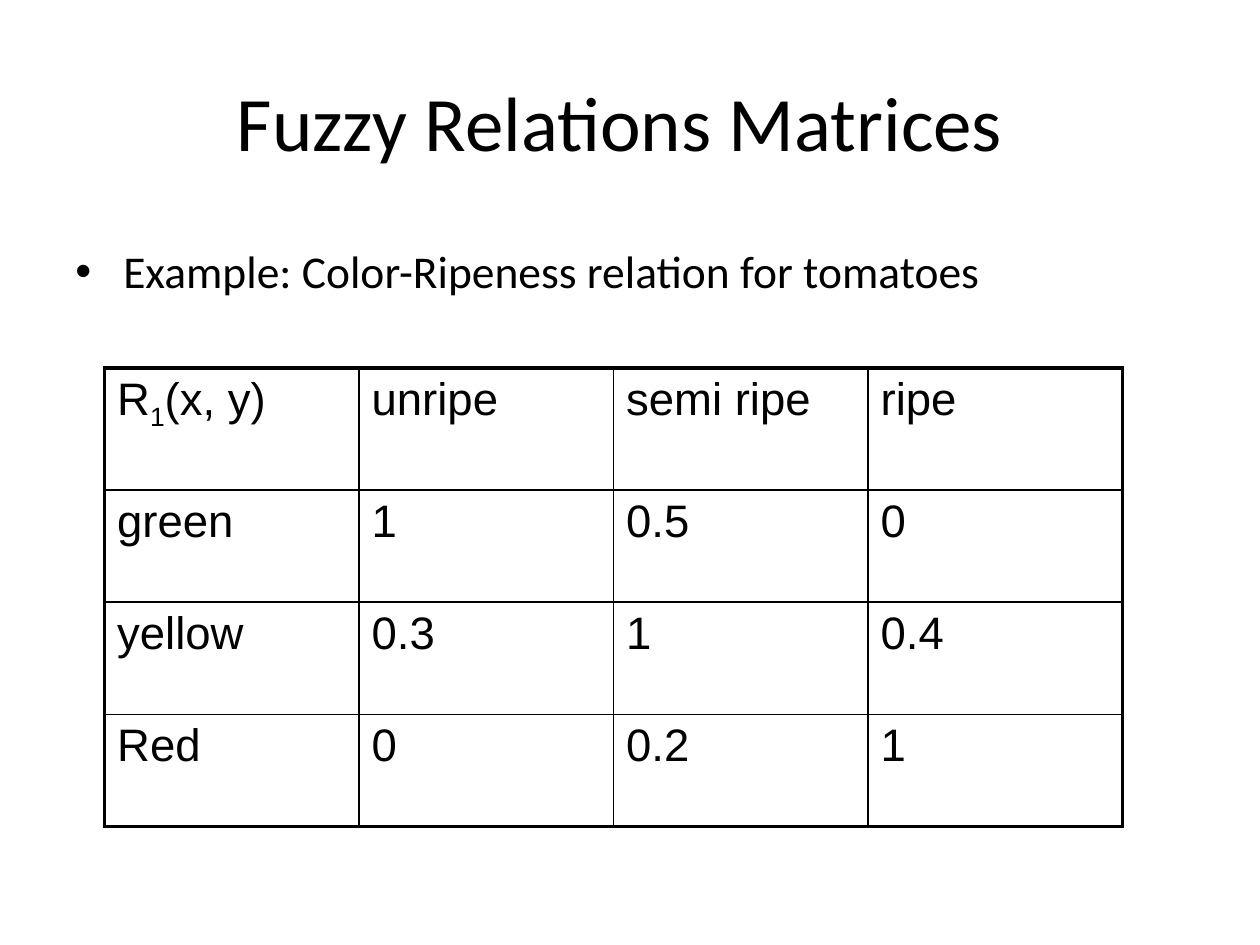
"""Build a slide with a fuzzy relation matrix for tomato color and ripeness."""
from lxml.etree import SubElement
from pptx import Presentation
from pptx.dml.color import RGBColor
from pptx.enum.text import MSO_ANCHOR, PP_ALIGN
from pptx.oxml.ns import qn
from pptx.util import Inches, Pt

TITLE = "Fuzzy Relations Matrices"
EXAMPLE = "Example: Color-Ripeness relation for tomatoes"
RELATION = [("R", 0), ("1", -25000), ("(x, y)", 0)]
RIPENESS = ["unripe", "semi ripe", "ripe"]
GRADES = {
    "green": ["1", "0.5", "0"],
    "yellow": ["0.3", "1", "0.4"],
    "Red": ["0", "0.2", "1"],
}
COLORS = {"ink": "000000"}
WIDTH, HEIGHT = 10, 7.5
TITLE_AREA = (0.67, 0.33, 8.5, 1.25)
EXAMPLE_AREA = (0.5, 1.88, 8.75, 0.95)
TABLE_LEFT, TABLE_TOP, COLUMN_WIDTH = 0.83, 2.92, 2.02
ROW_HEIGHTS = [0.97] + [0.89] * len(GRADES)
OUTER_LINE, INNER_LINE = 2.25, 1
INDENT = Inches(0.38)


def set_font(para, name, size):
    para.font.name = name
    para.font.size = Pt(size)
    para.font.color.rgb = RGBColor.from_string(COLORS["ink"])


def space_before(para):
    spacing = SubElement(para._p.get_or_add_pPr(), qn("a:spcBef"))
    SubElement(spacing, qn("a:spcPct"), val="20000")


def add_text(page, area, text, size):
    box = page.shapes.add_textbox(*map(Inches, area))
    box.text_frame.word_wrap = True
    para = box.text_frame.paragraphs[0]
    para.text = text
    set_font(para, "Calibri", size)
    return box.text_frame, para


def add_bullet(para):
    space_before(para)
    properties = para._p.get_or_add_pPr()
    properties.set("marL", str(INDENT))
    properties.set("indent", str(-INDENT))
    SubElement(properties, qn("a:buFont"), typeface="Arial")
    SubElement(properties, qn("a:buChar"), char="•")


def set_borders(cell, edges):
    properties = cell._tc.get_or_add_tcPr()
    for side, is_outer in edges.items():
        width = Pt(OUTER_LINE if is_outer else INNER_LINE)
        line = SubElement(properties, qn(f"a:ln{side}"), w=str(width))
        fill = SubElement(line, qn("a:solidFill"))
        SubElement(fill, qn("a:srgbClr"), val=COLORS["ink"])


def add_matrix(page):
    rows = [[RELATION, *RIPENESS]]
    rows += [[color, *grades] for color, grades in GRADES.items()]
    row_count, column_count = len(rows), len(rows[0])
    frame = page.shapes.add_table(
        row_count, column_count, Inches(TABLE_LEFT), Inches(TABLE_TOP),
        Inches(COLUMN_WIDTH * column_count), Inches(sum(ROW_HEIGHTS)))
    table = frame.table
    table.first_row = table.horz_banding = False
    for column in table.columns:
        column.width = Inches(COLUMN_WIDTH)
    for row, height in zip(table.rows, ROW_HEIGHTS):
        row.height = Inches(height)
    for row, values in enumerate(rows):
        for column, value in enumerate(values):
            cell = table.cell(row, column)
            para = cell.text_frame.paragraphs[0]
            space_before(para)
            set_font(para, "Arial", 26)
            for text, baseline in [(value, 0)] if isinstance(value, str) else value:
                span = para.add_run()
                span.text = text
                if baseline:
                    span.font._element.set("baseline", str(baseline))
            set_borders(cell, {
                "L": column == 0, "R": column == column_count - 1,
                "T": row == 0, "B": row == row_count - 1})
            cell.fill.background()


def main():
    deck = Presentation()
    deck.slide_width, deck.slide_height = Inches(WIDTH), Inches(HEIGHT)
    page = deck.slides.add_slide(deck.slide_layouts[6])
    title_frame, title = add_text(page, TITLE_AREA, TITLE, 44)
    title_frame.vertical_anchor = MSO_ANCHOR.MIDDLE
    title.alignment = PP_ALIGN.CENTER
    _, example = add_text(page, EXAMPLE_AREA, EXAMPLE, 26)
    add_bullet(example)
    add_matrix(page)
    deck.save("out.pptx")


if __name__ == "__main__":
    main()
